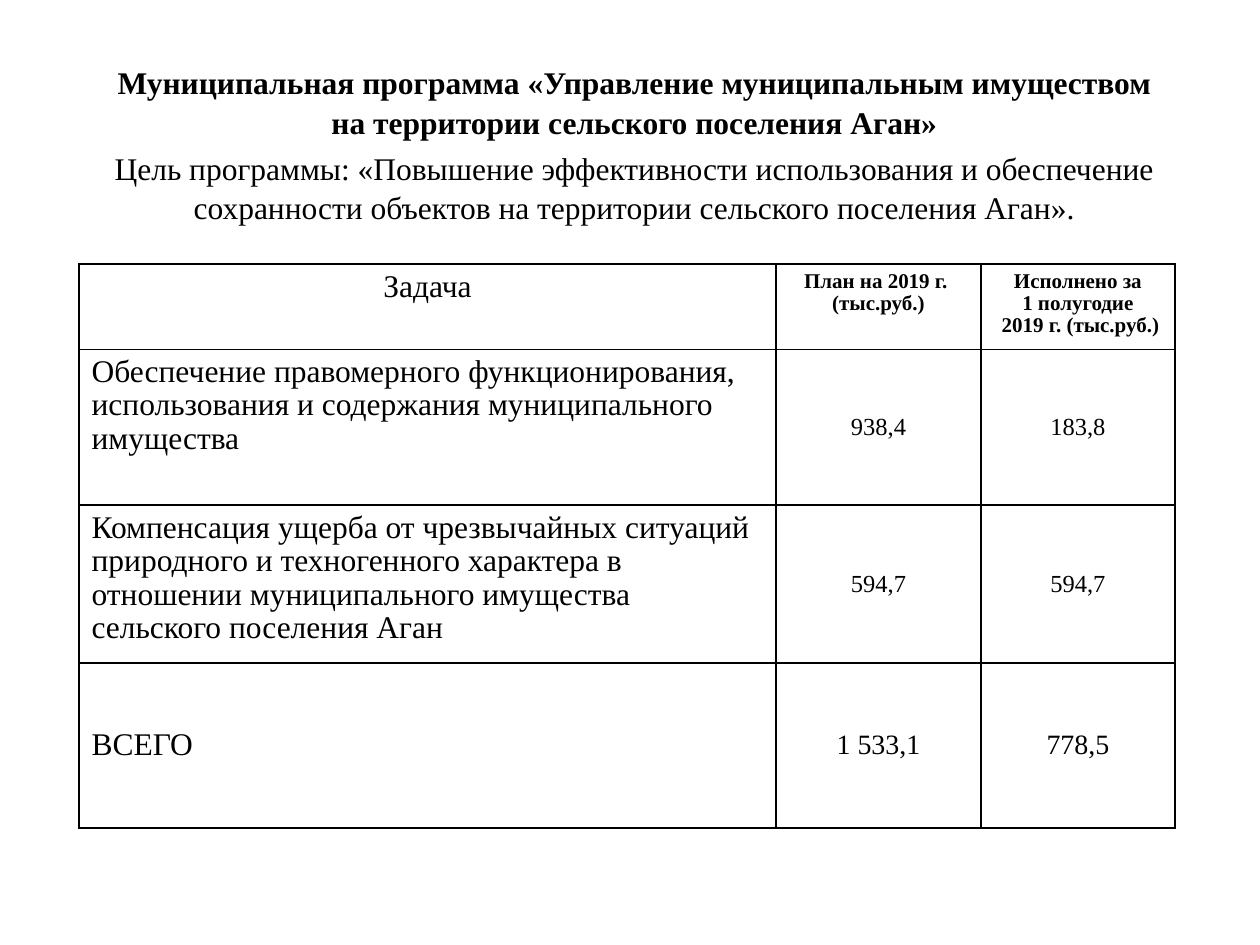
from dataclasses import dataclass

from lxml.etree import SubElement
from pptx import Presentation
from pptx.dml.color import RGBColor
from pptx.enum.text import MSO_ANCHOR, PP_ALIGN
from pptx.oxml.ns import qn
from pptx.util import Emu, Pt

PIXELS_PER_INCH = 126


def px(length):
    return Emu(round(length * 914400 / PIXELS_PER_INCH))


@dataclass(frozen=True)
class Theme:
    font: str = "Times New Roman"
    ink: str = "000000"
    body: int = 18
    total: int = 16
    value: int = 14
    header: int = 12
    border: int = 1
    heading_spacing: float = 1.05
    table_spacing: float = 0.96
    paragraph_gap: float = 3.6


@dataclass(frozen=True)
class CellText:
    text: str
    size: int
    bold: bool = False
    centered: bool = True
    middle: bool = True


class SlideBuilder:
    def __init__(self, slide, theme):
        self.slide = slide
        self.theme = theme

    def format_paragraph(self, paragraph, size, bold, centered, spacing):
        paragraph.alignment = PP_ALIGN.CENTER if centered else PP_ALIGN.LEFT
        paragraph.line_spacing = spacing
        for run in paragraph.runs:
            run.font.name = self.theme.font
            run.font.size = Pt(size)
            run.font.bold = bold
            run.font.color.rgb = RGBColor.from_string(self.theme.ink)

    def heading(self, left, top, width, height, title, goal):
        shape = self.slide.shapes.add_textbox(px(left), px(top), px(width), px(height))
        text_frame = shape.text_frame
        text_frame.word_wrap = True
        text_frame.text = f"{title}\n{goal}"
        for paragraph, bold in zip(text_frame.paragraphs, (True, False)):
            self.format_paragraph(
                paragraph, self.theme.body, bold, True, self.theme.heading_spacing
            )
            paragraph.space_before = Pt(self.theme.paragraph_gap)

    def border(self, cell):
        properties = cell._tc.get_or_add_tcPr()
        for position, side in enumerate(("a:lnL", "a:lnR", "a:lnT", "a:lnB")):
            line = SubElement(properties, qn(side), w=str(Pt(self.theme.border)))
            fill = SubElement(line, qn("a:solidFill"))
            SubElement(fill, qn("a:srgbClr"), val=self.theme.ink)
            properties.insert(position, line)

    def fill_cell(self, cell, content):
        cell.fill.background()
        cell.vertical_anchor = MSO_ANCHOR.MIDDLE if content.middle else MSO_ANCHOR.TOP
        cell.text_frame.text = content.text
        for paragraph in cell.text_frame.paragraphs:
            self.format_paragraph(
                paragraph, content.size, content.bold, content.centered,
                self.theme.table_spacing,
            )
        self.border(cell)

    def table(self, left, top, column_widths, row_heights, rows):
        table = self.slide.shapes.add_table(
            len(row_heights), len(column_widths), px(left), px(top),
            px(sum(column_widths)), px(sum(row_heights)),
        ).table
        table.first_row = False
        table.horz_banding = False
        for column, width in zip(table.columns, column_widths):
            column.width = px(width)
        for row, height, contents in zip(table.rows, row_heights, rows):
            row.height = px(height)
            for cell, content in zip(row.cells, contents):
                self.fill_cell(cell, content)


def budget_rows(theme):
    tasks = [
        ("Обеспечение правомерного функционирования, использования и содержания "
         "муниципального имущества", "938,4", "183,8"),
        ("Компенсация ущерба от чрезвычайных ситуаций природного и техногенного "
         "характера в отношении муниципального имущества сельского поселения Аган",
         "594,7", "594,7"),
    ]
    column_titles = (
        "План на 2019 г. \n(тыс.руб.)",
        "Исполнено за\n1 полугодие\n 2019 г. (тыс.руб.)",
    )
    header = [CellText("Задача", theme.body, middle=False)] + [
        CellText(text, theme.header, bold=True, middle=False) for text in column_titles
    ]
    task_rows = [
        [CellText(task, theme.body, centered=False, middle=False)]
        + [CellText(value, theme.value) for value in values]
        for task, *values in tasks
    ]
    total = [CellText("ВСЕГО", theme.body, centered=False)] + [
        CellText(value, theme.total) for value in ("1 533,1", "778,5")
    ]
    return [header, *task_rows, total]


def main():
    presentation = Presentation()
    presentation.slide_width = px(1260)
    presentation.slide_height = px(945)
    slide = presentation.slides.add_slide(presentation.slide_layouts[6])
    theme = Theme()
    builder = SlideBuilder(slide, theme)
    builder.heading(
        94, 55, 1081, 190,
        "Муниципальная программа «Управление муниципальным имуществом "
        "на территории сельского поселения Аган»",
        "Цель программы: «Повышение эффективности использования и обеспечение "
        "сохранности объектов на территории сельского поселения Аган».",
    )
    builder.table(79, 264, (697, 205, 194), (82, 156, 152, 165), budget_rows(theme))
    presentation.save("out.pptx")


if __name__ == "__main__":
    main()
